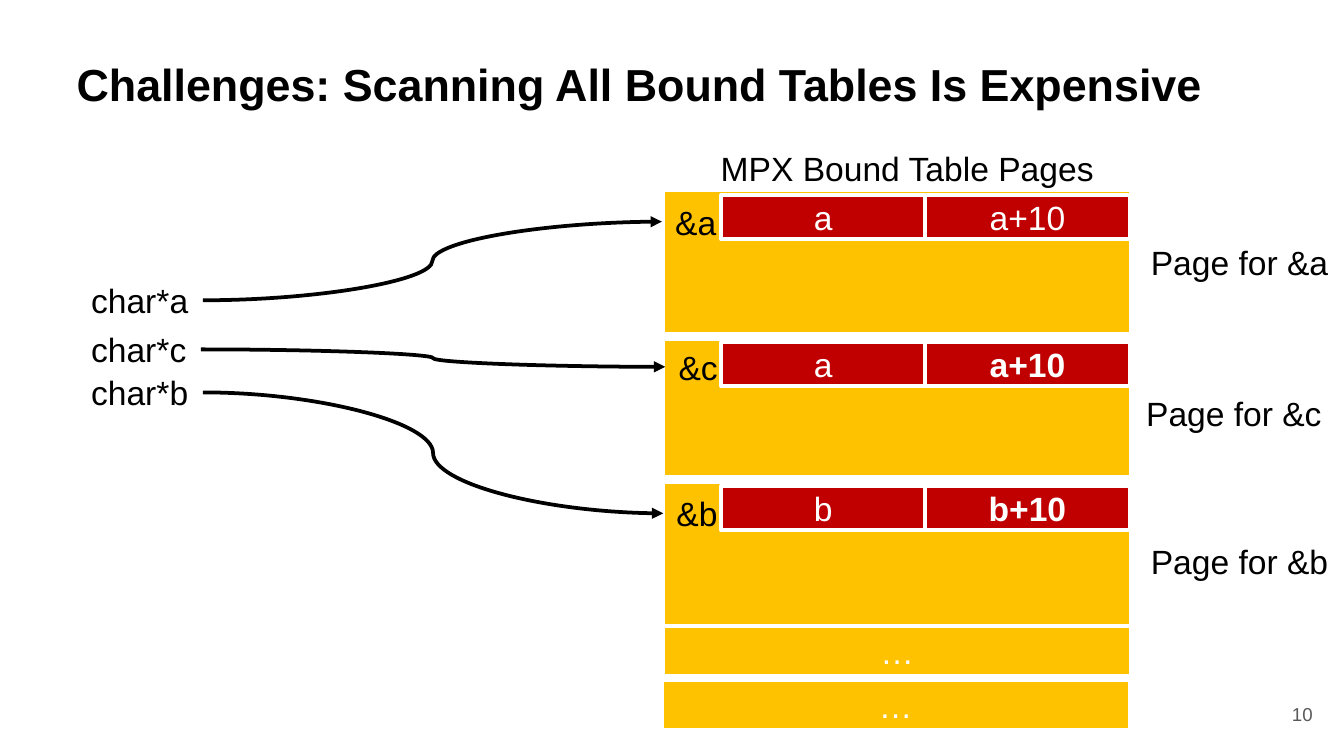
from dataclasses import dataclass

from lxml import etree
from pptx import Presentation
from pptx.dml.color import RGBColor
from pptx.enum.shapes import MSO_CONNECTOR, MSO_SHAPE
from pptx.enum.text import MSO_ANCHOR, PP_ALIGN
from pptx.oxml.ns import qn
from pptx.util import Emu, Pt

RECT = MSO_SHAPE.RECTANGLE
CURVE = MSO_CONNECTOR.CURVE
LEFT, CENTER, RIGHT = PP_ALIGN.LEFT, PP_ALIGN.CENTER, PP_ALIGN.RIGHT
TOP, MIDDLE = MSO_ANCHOR.TOP, MSO_ANCHOR.MIDDLE


@dataclass(frozen=True)
class Theme:
    """Colours, type sizes and line width of the slide."""

    font: str = "Arial"
    ink: str = "000000"
    paper: str = "FFFFFF"
    muted: str = "595959"
    page: str = "FFC200"
    entry: str = "C00000"
    title: int = 24
    body: int = 18
    small: int = 10
    line: int = 2


THEME = Theme()


def px(n):
    """Turn px, at 200 to the inch, into EMU."""
    return Emu(n * 4572)


def write(tf, text, *, size=THEME.body, color=THEME.ink, bold=False,
          align=LEFT, anchor=TOP, wrap=True, insets=(20, 10, 20, 10)):
    """Put one formatted paragraph into a text frame."""
    tf.word_wrap = wrap
    tf.vertical_anchor = anchor
    tf.margin_left, tf.margin_top, tf.margin_right, tf.margin_bottom = map(px, insets)
    p = tf.paragraphs[0]
    p.alignment = align
    r = p.add_run()
    r.text = text
    r.font.name = THEME.font
    r.font.size = Pt(size)
    r.font.bold = bold
    r.font.color.rgb = RGBColor.from_string(color)


class Deck:
    """Holds the theme and the current slide and draws each kind of element."""

    def __init__(self, prs, theme):
        """Add a title-only slide to the presentation."""
        self.theme = theme
        self.s = prs.slides.add_slide(prs.slide_layouts[5])

    def title(self, text, x, y, w, h):
        """Place and fill the title placeholder."""
        sp = self.s.shapes.title
        sp.left, sp.top, sp.width, sp.height = map(px, (x, y, w, h))
        write(sp.text_frame, text, size=self.theme.title, bold=True,
              insets=(20, 20, 20, 20))

    def text(self, text, x, y, w, h=80, **style):
        """Add a text box."""
        sp = self.s.shapes.add_textbox(*map(px, (x, y, w, h)))
        write(sp.text_frame, text, **style)

    def box(self, x, y, w, h, fill, text="", bold=False):
        """Add a filled rectangle with an optional centred caption."""
        sp = self.s.shapes.add_shape(RECT, *map(px, (x, y, w, h)))
        sp.shadow.inherit = False
        sp.fill.solid()
        sp.fill.fore_color.rgb = RGBColor.from_string(fill)
        sp.line.color.rgb = RGBColor.from_string(self.theme.paper)
        sp.line.width = Pt(self.theme.line)
        if text:
            write(sp.text_frame, text, color=self.theme.paper, bold=bold,
                  align=CENTER, anchor=MIDDLE)

    def arrow(self, x1, y1, x2, y2):
        """Add a curved connector with an arrowhead at its end."""
        c = self.s.shapes.add_connector(CURVE, *map(px, (x1, y1, x2, y2)))
        c.line.color.rgb = RGBColor.from_string(self.theme.ink)
        c.line.width = Pt(self.theme.line)
        etree.SubElement(c.line._get_or_add_ln(), qn("a:tailEnd"), type="triangle")
        etree.SubElement(c._element.spPr, qn("a:effectLst"))


def main():
    """Build the slide and save it."""
    prs = Presentation()
    prs.slide_width, prs.slide_height = px(2000), px(1125)
    d = Deck(prs, THEME)
    d.title("Challenges: Scanning All Bound Tables Is Expensive", 94, 64, 1726, 94)
    d.text("10", 1853, 1020, 120, 86, size=THEME.small, color=THEME.muted,
           align=RIGHT, anchor=MIDDLE, insets=(20, 20, 20, 20))

    page_x, page_w, entry_x, entry_w = 987, 696, 1073, 304
    pages = [
        ("a", "a", False, (283, 214), 290, (985, 290), (1693, 350)),
        ("c", "a", True, (505, 205), 509, (990, 506), (1686, 575)),
        ("b", "b", True, (718, 214), 723, (987, 724), (1693, 795)),
    ]
    for name, base, bold, (y, h), entry_y, address, label in pages:
        d.box(page_x, y, page_w, h, THEME.page)
        for i, value in enumerate((base, f"{base}+10")):
            d.box(entry_x + i * entry_w, entry_y, entry_w, 66, THEME.entry,
                  value, bold and i == 1)
        d.text(f"&{name}", *address, 102, wrap=False)
        d.text(f"Page for &{name}", *label, 306, wrap=False)
    for x, y in ((985, 1012), (page_x, 932)):
        d.box(x, y, page_w, 74, THEME.page, "…")
    d.text("MPX Bound Table Pages", 1018, 210, 664, align=CENTER)

    pointers = [
        ("a", 407, (302, 447, 985, 330)),
        ("c", 480, (299, 520, 990, 546)),
        ("b", 544, (302, 584, 987, 764)),
    ]
    for name, y, ends in pointers:
        d.text(f"char*{name}", 116, y, 186, wrap=False)
        d.arrow(*ends)
    prs.save("out.pptx")


if __name__ == "__main__":
    main()
